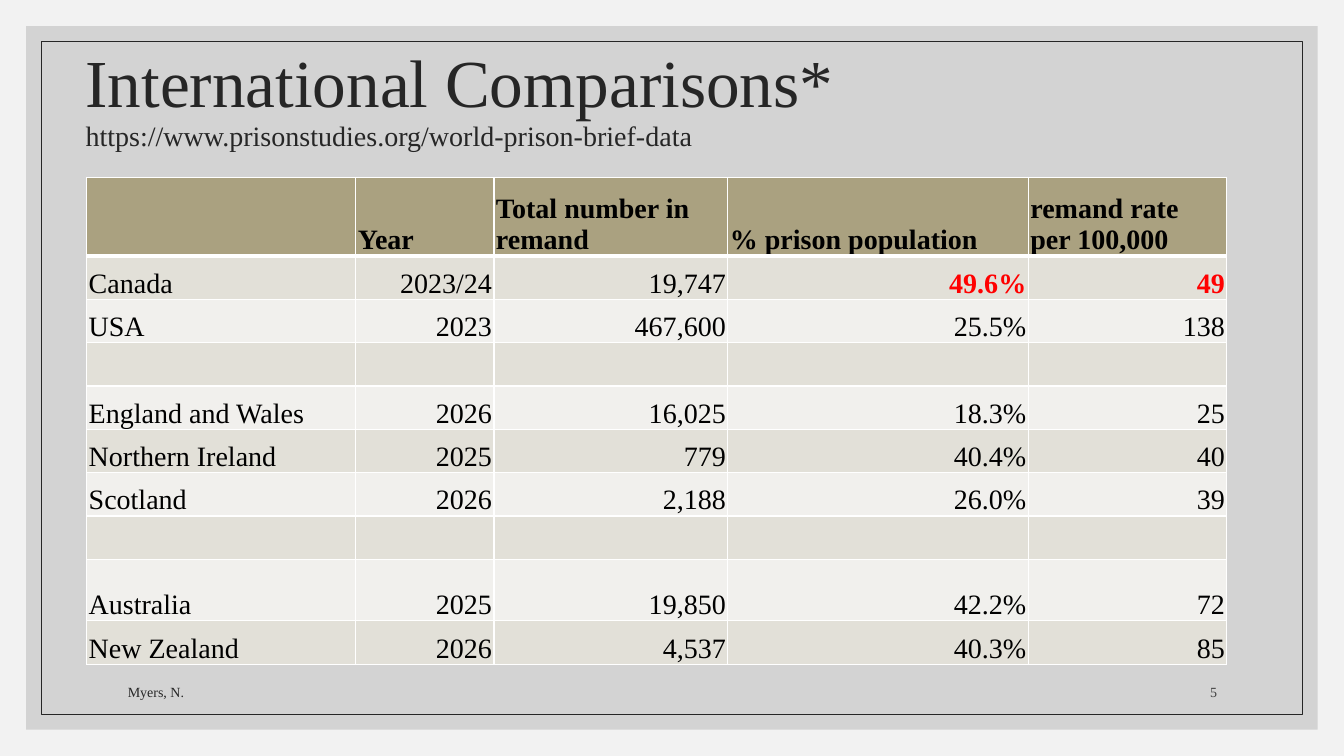
from dataclasses import dataclass

from lxml import etree
from pptx import Presentation
from pptx.dml.color import RGBColor
from pptx.enum.shapes import MSO_SHAPE
from pptx.enum.text import MSO_ANCHOR, PP_ALIGN
from pptx.oxml.ns import qn
from pptx.util import Inches, Pt

RECT = MSO_SHAPE.RECTANGLE
MIDDLE, BOTTOM = MSO_ANCHOR.MIDDLE, MSO_ANCHOR.BOTTOM
LEFT, RIGHT = PP_ALIGN.LEFT, PP_ALIGN.RIGHT


@dataclass(frozen=True)
class Theme:
    font: str = "Times New Roman"
    page: str = "F2F2F2"
    panel: str = "BFBFBF"
    ink: str = "262626"
    number: str = "404040"
    text: str = "000000"
    accent: str = "FF0000"
    border: str = "FFFFFF"
    header: str = "AAA180"
    bands: tuple = ("F1F0ED", "E2E0D8")
    title: int = 48
    body: int = 20
    footer: int = 10


T = Theme()
WIDTH, HEIGHT = 13.33, 7.5
TITLE = "International Comparisons*"
SOURCE = "https://www.prisonstudies.org/world-prison-brief-data"
ROWS = [
    ("", "Year", "Total number in remand", "% prison population", "remand rate per 100,000"),
    ("Canada", "2023/24", "19,747", "49.6%", "49"),
    ("USA", "2023", "467,600", "25.5%", "138"),
    ("",) * 5,
    ("England and Wales", "2026", "16,025", "18.3%", "25"),
    ("Northern Ireland", "2025", "779", "40.4%", "40"),
    ("Scotland", "2026", "2,188", "26.0%", "39"),
    ("",) * 5,
    ("Australia", "2025", "19,850", "42.2%", "72"),
    ("New Zealand", "2026", "4,537", "40.3%", "85"),
]
HIGHLIGHTS = {(1, 3), (1, 4)}
COLS = (2.67, 1.37, 2.32, 2.98, 1.97)
ROW, TALL_ROWS = 0.43, {0: 0.78, 8: 0.61}
TABLE_LEFT, TABLE_TOP = 0.86, 1.76
FOOTERS = [
    ("Myers, N.", 1.17, 6.36, LEFT, T.ink),
    ("5", 11.25, 0.92, RIGHT, T.number),
]


def rgb(color):
    return RGBColor.from_string(color)


def style(run, size, color, bold=False):
    f = run.font
    f.name, f.size, f.bold = T.font, Pt(size), bold
    f.color.rgb = rgb(color)


def add_frame(s, inset):
    sp = s.shapes.add_shape(RECT, Inches(inset), Inches(inset),
                            Inches(WIDTH - 2 * inset), Inches(HEIGHT - 2 * inset))
    sp.shadow.inherit = False
    return sp


def add_text(s, text, box, anchor, align, sizes, color):
    tf = s.shapes.add_textbox(*map(Inches, box)).text_frame
    tf.word_wrap, tf.vertical_anchor = True, anchor
    p = tf.paragraphs[0]
    p.text, p.alignment = text, align
    for r, size in zip(p.runs, sizes):
        style(r, size, color)
    return p


def add_borders(cell, widths):
    tc_pr = cell._tc.get_or_add_tcPr()
    for side, width in zip("LRTB", widths):
        ln = etree.SubElement(tc_pr, qn(f"a:ln{side}"), w=str(Pt(width)))
        fill = etree.SubElement(ln, qn("a:solidFill"))
        etree.SubElement(fill, qn("a:srgbClr"), val=T.border)


def fill_cell(cell, i, j, text):
    add_borders(cell, (1, 1, 3 if i == 1 else 1, 3 if i == 0 else 1))
    cell.fill.solid()
    cell.fill.fore_color.rgb = rgb(T.bands[i % 2] if i else T.header)
    cell.margin_left = cell.margin_right = cell.margin_top = Inches(0.02)
    cell.margin_bottom = 0
    cell.vertical_anchor = BOTTOM
    p = cell.text_frame.paragraphs[0]
    p.text = text
    p.alignment = RIGHT if i and j else LEFT
    hot = (i, j) in HIGHLIGHTS
    for r in p.runs:
        style(r, T.body, T.accent if hot else T.text, hot or i == 0)


def add_data_table(s):
    heights = [TALL_ROWS.get(i, ROW) for i in range(len(ROWS))]
    box = (TABLE_LEFT, TABLE_TOP, sum(COLS), sum(heights))
    table = s.shapes.add_table(len(ROWS), len(COLS), *map(Inches, box)).table
    for col, width in zip(table.columns, COLS):
        col.width = Inches(width)
    for row, height in zip(table.rows, heights):
        row.height = Inches(height)
    for i, values in enumerate(ROWS):
        for j, text in enumerate(values):
            fill_cell(table.cell(i, j), i, j, text)


def main():
    prs = Presentation()
    prs.slide_width, prs.slide_height = Inches(WIDTH), Inches(HEIGHT)
    s = prs.slides.add_slide(prs.slide_layouts[6])
    s.background.fill.solid()
    s.background.fill.fore_color.rgb = rgb(T.page)

    panel = add_frame(s, 0.26)
    panel.fill.solid()
    panel.fill.fore_color.rgb = rgb(T.panel)
    panel.line.fill.background()
    color = panel.fill._xPr.find(qn("a:solidFill"))[0]
    etree.SubElement(color, qn("a:alpha"), val="60000")

    outline = add_frame(s, 0.41)
    outline.fill.background()
    outline.line.color.rgb = rgb(T.ink)
    outline.line.width = Pt(0.5)

    p = add_text(s, f"{TITLE}\v{SOURCE}", (0.75, 0.4, 11.15, 1.2), MIDDLE, LEFT,
                 (T.title, T.body), T.ink)
    p.line_spacing = 0.9
    add_data_table(s)
    for text, left, width, align, ink in FOOTERS:
        add_text(s, text, (left, 6.6, width, 0.4), BOTTOM, align, (T.footer,), ink)
    prs.save("out.pptx")


if __name__ == "__main__":
    main()
